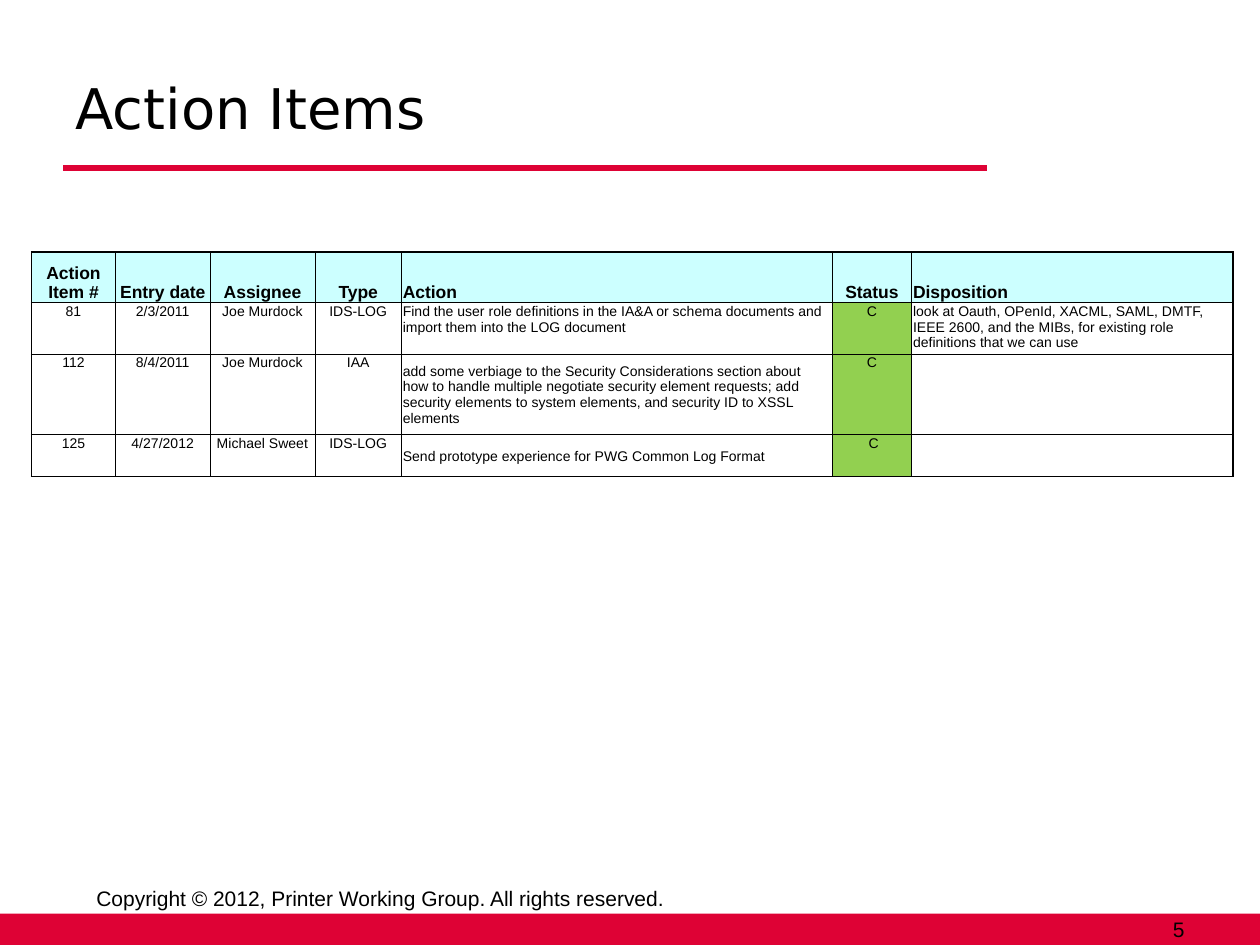
from dataclasses import dataclass

from lxml import etree
from pptx import Presentation
from pptx.dml.color import RGBColor
from pptx.enum.shapes import MSO_CONNECTOR, MSO_SHAPE
from pptx.enum.text import MSO_ANCHOR, PP_ALIGN
from pptx.oxml.ns import qn
from pptx.util import Inches, Length, Pt

LEFT, CENTER, RIGHT = PP_ALIGN.LEFT, PP_ALIGN.CENTER, PP_ALIGN.RIGHT
TOP, MIDDLE, BOTTOM = MSO_ANCHOR.TOP, MSO_ANCHOR.MIDDLE, MSO_ANCHOR.BOTTOM
TITLE_ONLY = 5


@dataclass(frozen=True)
class Theme:
    red: str = "DE0235"
    ink: str = "000000"
    header: str = "CCFFFF"
    closed: str = "92D050"
    font: str = "Arial"
    title_font: str = "DejaVu Sans"
    title_size: float = 32
    footer_size: float = 12
    header_size: float = 10
    body_size: float = 8
    thin: float = 0.5
    thick: float = 1


@dataclass(frozen=True)
class Column:
    heading: str
    span: float
    align: PP_ALIGN = CENTER


@dataclass(frozen=True)
class Row:
    span: float
    action_anchor: MSO_ANCHOR
    values: tuple[str, ...]


@dataclass(frozen=True)
class Footer:
    text: str
    box: tuple[float, float, float, float]
    align: PP_ALIGN


THEME = Theme()
ACTION, STATUS = 4, 5

COLUMNS = [
    Column("Action Item #", 8),
    Column("Entry date", 9),
    Column("Assignee", 10),
    Column("Type", 8.25),
    Column("Action", 41, LEFT),
    Column("Status", 7.6),
    Column("Disposition", 30.6, LEFT),
]
HEADER_SPAN = 4.8
ROWS = [
    Row(4.65, TOP, (
        "81", "2/3/2011", "Joe Murdock", "IDS-LOG",
        "Find the user role definitions in the IA&A or schema documents and "
        "import them into the LOG document", "C",
        "look at Oauth, OPenId, XACML, SAML, DMTF, IEEE 2600, and the MIBs, "
        "for existing role definitions that we can use")),
    Row(7.7, MIDDLE, (
        "112", "8/4/2011", "Joe Murdock", "IAA",
        "add some verbiage to the Security Considerations section about how "
        "to handle multiple negotiate security element requests; add security "
        "elements to system elements, and security ID to XSSL elements", "C", "")),
    Row(3.95, MIDDLE, (
        "125", "4/27/2012", "Michael Sweet", "IDS-LOG",
        "Send prototype experience for PWG Common Log Format", " C", "")),
]
FOOTERS = [
    Footer("5", (86, 87, 28, 3), RIGHT),
    Footer("Copyright © 2012, Printer Working Group. All rights reserved.",
           (8, 84, 59, 3), LEFT),
]


def grid(n: float) -> Length:
    """Length of n cells on the slide's grid of 120 columns by 90 rows."""
    return Inches(n / 12)


def write(tf, text: str, size: float, align: PP_ALIGN = LEFT,
          font: str = THEME.font, bold: bool = False) -> None:
    tf.text = text
    p = tf.paragraphs[0]
    p.alignment = align
    for r in p.runs:
        r.font.name, r.font.size, r.font.bold = font, Pt(size), bold
        r.font.color.rgb = RGBColor.from_string(THEME.ink)


def set_borders(cell, widths: dict[str, float]) -> None:
    tcPr = cell._tc.get_or_add_tcPr()
    for i, (side, width) in enumerate(widths.items()):
        ln = etree.Element(qn(f"a:ln{side}"), w=str(Pt(width)))
        fill = etree.SubElement(ln, qn("a:solidFill"))
        etree.SubElement(fill, qn("a:srgbClr"), val=THEME.ink)
        tcPr.insert(i, ln)


def format_cell(cell, fill: str | None, anchor: MSO_ANCHOR) -> None:
    cell.margin_left = cell.margin_right = cell.margin_top = Inches(0.01)
    cell.margin_bottom = 0
    cell.vertical_anchor = anchor
    if fill:
        cell.fill.solid()
        cell.fill.fore_color.rgb = RGBColor.from_string(fill)
    else:
        cell.fill.background()


def add_action_table(s) -> None:
    spans = [HEADER_SPAN] + [row.span for row in ROWS]
    table = s.shapes.add_table(
        len(spans), len(COLUMNS), grid(3), grid(24),
        grid(sum(c.span for c in COLUMNS)), grid(sum(spans))).table
    for i, column in enumerate(COLUMNS):
        table.columns[i].width = grid(column.span)
    for i, span in enumerate(spans):
        table.rows[i].height = grid(span)

    for i in range(len(spans)):
        for j, column in enumerate(COLUMNS):
            cell = table.cell(i, j)
            if i == 0:
                text, size, fill, anchor = column.heading, THEME.header_size, THEME.header, BOTTOM
            else:
                row = ROWS[i - 1]
                text, size = row.values[j], THEME.body_size
                fill = THEME.closed if j == STATUS else None
                anchor = row.action_anchor if j == ACTION else TOP
            write(cell.text_frame, text, size, column.align, bold=i == 0)
            format_cell(cell, fill, anchor)
            # Heavier rule on the left, right and top edges of the table
            set_borders(cell, {
                "L": THEME.thick if j == 0 else THEME.thin,
                "R": THEME.thick if j == len(COLUMNS) - 1 else THEME.thin,
                "T": THEME.thick if i == 0 else THEME.thin,
                "B": THEME.thin,
            })


def add_footer(s, footer: Footer) -> None:
    tf = s.shapes.add_textbox(*map(grid, footer.box)).text_frame
    tf.word_wrap = True
    tf.vertical_anchor = MIDDLE
    write(tf, footer.text, THEME.footer_size, footer.align)


def add_decoration(s) -> None:
    red = RGBColor.from_string(THEME.red)
    band = s.shapes.add_shape(MSO_SHAPE.RECTANGLE, 0, grid(87), grid(120), grid(3))
    band.shadow.inherit = False
    band.fill.solid()
    band.fill.fore_color.rgb = red
    band.line.fill.background()

    rule = s.shapes.add_connector(MSO_CONNECTOR.STRAIGHT, grid(6), grid(16), grid(94), grid(16))
    rule.line.color.rgb = red
    rule.line.width = Pt(3)
    etree.SubElement(rule._element.spPr, qn("a:effectLst"))


def main() -> None:
    prs = Presentation()
    prs.slide_width, prs.slide_height = grid(120), grid(90)
    s = prs.slides.add_slide(prs.slide_layouts[TITLE_ONLY])

    # Footer band and title rule
    add_decoration(s)
    for footer in FOOTERS:
        add_footer(s, footer)

    # Title
    title = s.shapes.title
    title.left, title.top, title.width, title.height = map(grid, (6, 4.5, 87, 11.4))
    title.text_frame.vertical_anchor = MIDDLE
    write(title.text_frame, "Action Items", THEME.title_size, font=THEME.title_font)

    # Action items
    add_action_table(s)
    prs.save("out.pptx")


if __name__ == "__main__":
    main()
